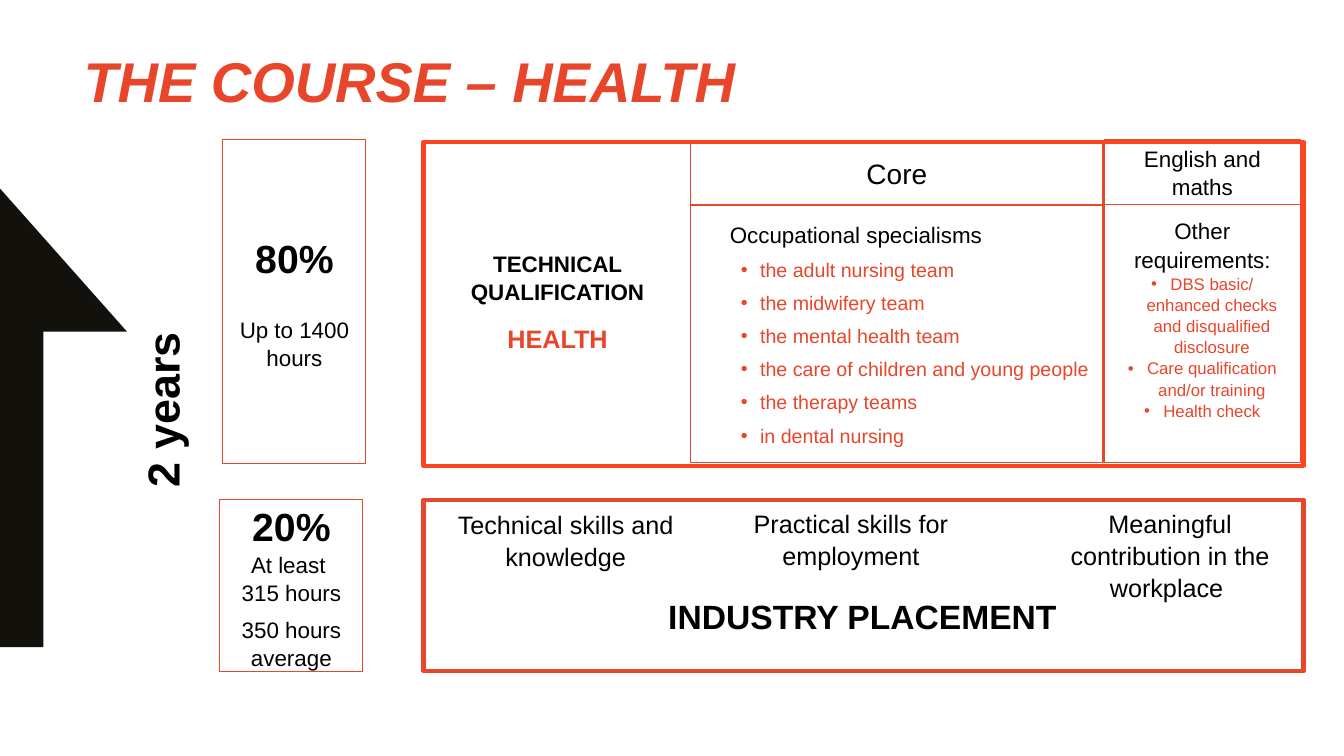
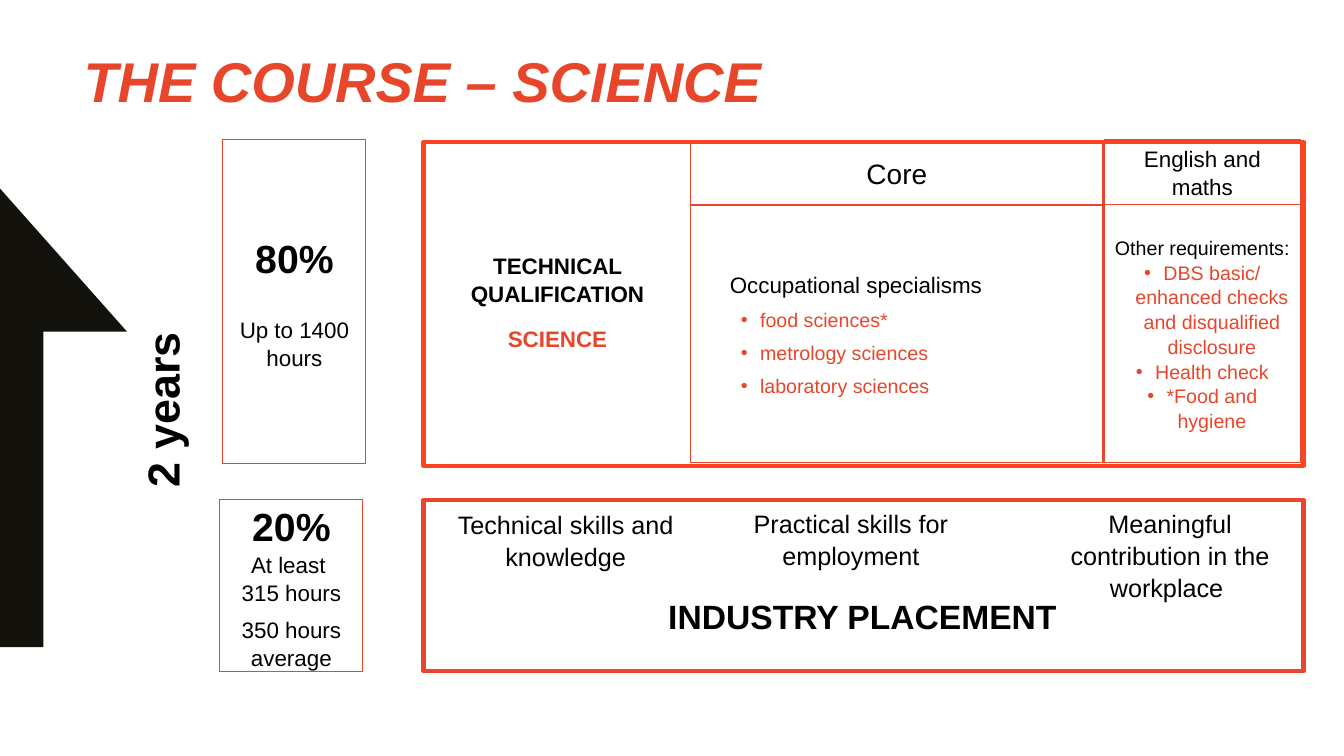
"""Build the two course overview slides: Health and Science."""
from dataclasses import dataclass

from lxml import etree
from pptx import Presentation
from pptx.dml.color import RGBColor
from pptx.enum.shapes import MSO_SHAPE
from pptx.enum.text import MSO_ANCHOR, PP_ALIGN
from pptx.oxml.ns import qn
from pptx.slide import Slide
from pptx.util import Inches, Pt

RECTANGLE = MSO_SHAPE.RECTANGLE
TOP, MIDDLE = MSO_ANCHOR.TOP, MSO_ANCHOR.MIDDLE
LEFT, CENTER = PP_ALIGN.LEFT, PP_ALIGN.CENTER

BLACK = RGBColor(0x00, 0x00, 0x00)
WHITE = RGBColor(0xFF, 0xFF, 0xFF)
ARROW_BLACK = RGBColor(0x12, 0x11, 0x0C)
ACCENT = RGBColor(0xE8, 0x46, 0x2B)
BORDER = RGBColor(0xE8, 0x47, 0x2B)
FRAME = RGBColor(0xFC, 0x44, 0x21)
FONT = "Arial"
LINE_SPACING = 1.05
THIN, THICK = 0.75, 3

ARROW = [(0.43, 3.29), (1.26, 3.29), (0, 1.87), (0, 6.42), (0.43, 6.42)]
FRAME_LEFT, FRAME_WIDTH = 4.2, 8.73
CORE_LEFT, CORE_WIDTH = 6.85, 4.09
OTHER_LEFT, OTHER_WIDTH = 10.95, 1.95
DETAIL_TOP, DETAIL_HEIGHT = 2.03, 2.56
PLACEMENT_TOP, PLACEMENT_HEIGHT = 4.96, 1.7


@dataclass(frozen=True)
class Line:
    """One paragraph and its formatting."""
    text: str
    size: float
    color: RGBColor = BLACK
    bold: bool = False
    italic: bool = False
    align: PP_ALIGN = CENTER
    before: float = 0
    after: float = 0
    margin: float = 0
    indent: float = 0
    bullet: bool = False


@dataclass(frozen=True)
class Box:
    """A rectangle that may hold text."""
    left: float
    top: float
    width: float
    height: float
    lines: tuple[Line, ...] = ()
    border: RGBColor | None = None
    weight: float = THIN
    fill: RGBColor | None = None
    anchor: MSO_ANCHOR = MIDDLE
    rotation: float = 0
    bottom_inset: float = 0.05


@dataclass(frozen=True)
class Course:
    """The content that differs between the slides."""
    name: str
    name_size: float
    specialisms: tuple[str, ...]
    requirements: tuple[str, ...]
    heading_size: float
    requirement_size: float
    bottom_inset: float = 0.05


COURSES = (
    Course("HEALTH", 18,
           ("the adult nursing team", "the midwifery team", "the mental health team",
            "the care of children and young people", "the therapy teams",
            "in dental nursing"),
           ("DBS basic/ enhanced checks and disqualified disclosure",
            "Care qualification and/or training", "Health check"),
           16, 12, 0.35),
    Course("SCIENCE", 16,
           ("food sciences*", "metrology sciences", "laboratory sciences"),
           ("DBS basic/ enhanced checks and disqualified disclosure",
            "Health check", "*Food and hygiene"),
           14, 14),
)

DURATION_BOXES = (
    Box(2.21, 1.38, 1.42, 3.22,
        (Line("80%", 28, bold=True), Line("Up to 1400 hours", 16, before=24)),
        BORDER),
    Box(2.18, PLACEMENT_TOP, 1.42, PLACEMENT_HEIGHT,
        (Line("20%", 28, bold=True), Line("At least ", 16),
         Line("315 hours", 16, after=6), Line("350 hours average", 16)),
        BORDER),
    Box(-0.98, 3.83, 5.14, 0.47, (Line("2 years", 32, bold=True),), rotation=270),
)

HEADER_BOXES = (
    Box(CORE_LEFT, 1.39, CORE_WIDTH, 0.65, (Line("Core", 20),), BORDER),
    Box(OTHER_LEFT, 1.38, OTHER_WIDTH, 0.65, (Line("English and maths", 16),), BORDER),
)

PLACEMENT_BOXES = (
    Box(FRAME_LEFT, 1.41, FRAME_WIDTH, 3.21, border=FRAME, weight=THICK),
    Box(4.25, 4.99, 2.72, 0.83, (Line("Technical skills and knowledge", 18),), anchor=TOP),
    Box(7.06, 4.98, 2.76, 0.81, (Line("Practical skills for employment", 18),), anchor=TOP),
    Box(4.31, 5.93, 8.58, 0.35, (Line("INDUSTRY PLACEMENT ", 24, bold=True),), fill=WHITE),
    Box(FRAME_LEFT, PLACEMENT_TOP, FRAME_WIDTH, PLACEMENT_HEIGHT,
        border=BORDER, weight=THICK),
    Box(10.32, 4.98, 2.57, 1.17,
        (Line("Meaningful contribution in the workplace ", 18),), anchor=TOP),
)


def write_line(paragraph, line: Line) -> None:
    """Write and format one paragraph."""
    paragraph.text = line.text
    paragraph.alignment = line.align
    paragraph.line_spacing = LINE_SPACING
    paragraph.space_before = Pt(line.before)
    paragraph.space_after = Pt(line.after)
    properties = paragraph._p.get_or_add_pPr()
    properties.set("marL", str(Inches(line.margin)))
    properties.set("indent", str(Inches(line.indent)))
    if line.bullet:
        etree.SubElement(properties, qn("a:buFont"), typeface=FONT)
        etree.SubElement(properties, qn("a:buChar"), char="•")
    font = paragraph.font
    font.name = FONT
    font.size = Pt(line.size)
    font.bold = line.bold
    font.italic = line.italic
    font.color.rgb = line.color


def draw_box(slide: Slide, box: Box) -> None:
    """Draw a box with its border, fill and text."""
    position = [Inches(value) for value in (box.left, box.top, box.width, box.height)]
    if box.border is None and box.fill is None:
        shape = slide.shapes.add_textbox(*position)
    else:
        shape = slide.shapes.add_shape(RECTANGLE, *position)
        shape.shadow.inherit = False
        if box.fill is None:
            shape.fill.background()
        else:
            shape.fill.solid()
            shape.fill.fore_color.rgb = box.fill
        if box.border is None:
            shape.line.fill.background()
        else:
            shape.line.color.rgb = box.border
            shape.line.width = Pt(box.weight)
    shape.rotation = box.rotation
    frame = shape.text_frame
    frame.word_wrap = True
    frame.vertical_anchor = box.anchor
    frame.margin_bottom = Inches(box.bottom_inset)
    for index, line in enumerate(box.lines):
        paragraph = frame.add_paragraph() if index else frame.paragraphs[0]
        write_line(paragraph, line)


def draw_arrow(slide: Slide) -> None:
    """Draw the black arrow at the left edge."""
    points = [(Inches(x), Inches(y)) for x, y in ARROW]
    builder = slide.shapes.build_freeform(*points[0])
    builder.add_line_segments(points[1:], close=True)
    arrow = builder.convert_to_shape()
    arrow.shadow.inherit = False
    arrow.fill.solid()
    arrow.fill.fore_color.rgb = ARROW_BLACK
    arrow.line.fill.background()


def course_boxes(course: Course) -> tuple[Box, ...]:
    """Return the boxes whose text depends on the course."""
    last = len(course.specialisms) - 1
    specialisms = tuple(
        Line(text, 14, ACCENT, align=LEFT, before=3, after=0 if index == last else 3,
             margin=0.59, indent=-0.19, bullet=True)
        for index, text in enumerate(course.specialisms))
    requirements = tuple(
        Line(text, course.requirement_size, ACCENT, margin=0.19, indent=-0.19, bullet=True)
        for text in course.requirements)
    return (
        Box(FRAME_LEFT, 1.38, 2.66, 3.22,
            (Line("TECHNICAL QUALIFICATION", 16, bold=True, after=6),
             Line(course.name, course.name_size, ACCENT, bold=True, before=6))),
        Box(CORE_LEFT, DETAIL_TOP, CORE_WIDTH, DETAIL_HEIGHT,
            (Line("Occupational specialisms", 16, align=LEFT, after=3, indent=0.29),
             *specialisms), BORDER),
        Box(OTHER_LEFT, DETAIL_TOP, OTHER_WIDTH, DETAIL_HEIGHT,
            (Line("Other requirements:", course.heading_size), *requirements),
            BORDER, bottom_inset=course.bottom_inset),
    )


def build_slide(slide: Slide, course: Course) -> None:
    """Draw one course slide."""
    draw_arrow(slide)
    title = Box(0.73, 0.38, 11.81, 1.42,
                (Line(f"THE COURSE – {course.name}", 40, ACCENT, bold=True,
                      italic=True, align=LEFT),), anchor=TOP)
    for box in (*DURATION_BOXES, *HEADER_BOXES, *course_boxes(course),
                *PLACEMENT_BOXES, title):
        draw_box(slide, box)


def main() -> None:
    """Build and save the presentation."""
    presentation = Presentation()
    presentation.slide_width = Inches(13.33)
    presentation.slide_height = Inches(7.5)
    blank = presentation.slide_layouts[6]
    for course in COURSES:
        build_slide(presentation.slides.add_slide(blank), course)
    presentation.save("out.pptx")


if __name__ == "__main__":
    main()
